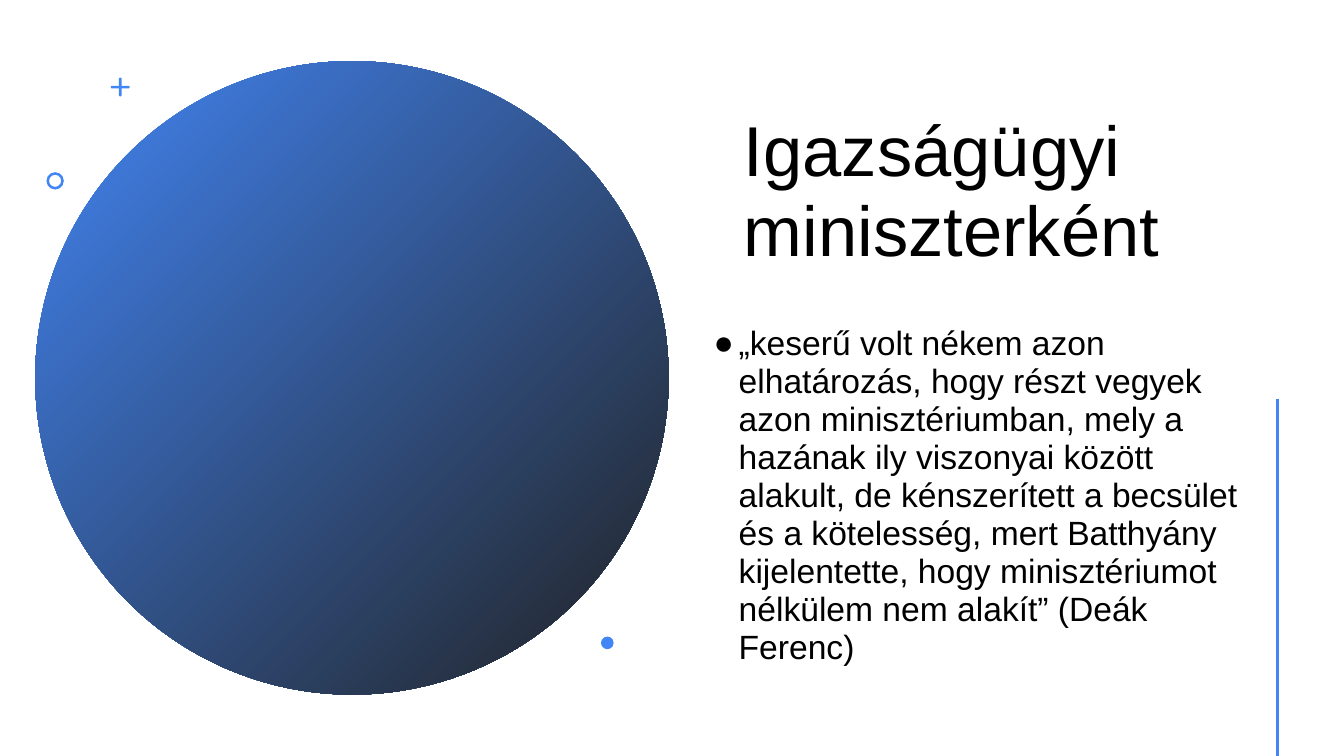
from lxml.etree import SubElement
from pptx import Presentation
from pptx.dml.color import RGBColor
from pptx.enum.shapes import MSO_CONNECTOR, MSO_SHAPE as SHAPE
from pptx.enum.text import MSO_ANCHOR as ANCHOR
from pptx.oxml.ns import qn
from pptx.util import Pt

BLUE = RGBColor(0x42, 0x85, 0xF4)
DARK = RGBColor(0x21, 0x21, 0x21)
BLACK = RGBColor(0, 0, 0)

TITLE = "Igazságügyi miniszterként"
QUOTE = (
    "„keserű volt nékem azon elhatározás, hogy részt vegyek azon "
    "minisztériumban, mely a hazának ily viszonyai között alakult, de "
    "kénszerített a becsület és a kötelesség, mert Batthyány kijelentette, "
    "hogy minisztériumot nélkülem nem alakít” (Deák Ferenc)"
)


def write(tf, text, size, color=BLACK, font="Arial", spacing=0.94, after=0, bullet=None):
    p = tf.paragraphs[0]
    p.line_spacing = spacing
    p.space_after = Pt(after)
    if bullet:
        pPr = p._p.get_or_add_pPr()
        pPr.set("marL", str(Pt(18)))
        pPr.set("indent", str(-Pt(18)))
        SubElement(pPr, qn("a:buFont"), typeface=font)
        SubElement(pPr, qn("a:buChar"), char=bullet)
    r = p.add_run()
    r.text = text
    r.font.name, r.font.size = font, Pt(size)
    r.font.color.rgb = color


class Deck:
    def __init__(self, width, height):
        self.prs = Presentation()
        self.prs.slide_width, self.prs.slide_height = Pt(width), Pt(height)
        self.s = self.prs.slides.add_slide(self.prs.slide_layouts[6])

    def shape(self, kind, cx, cy, w, h, adjust=None):
        """Add a blue shape centred on (cx, cy)."""
        sp = self.s.shapes.add_shape(kind, Pt(cx - w / 2), Pt(cy - h / 2), Pt(w), Pt(h))
        sp.shadow.inherit = False
        sp.fill.solid()
        sp.fill.fore_color.rgb = BLUE
        sp.line.fill.background()
        if adjust is not None:
            sp.adjustments[0] = adjust
        return sp

    def gradient(self, sp, colors, angle):
        sp.fill.gradient()
        sp.fill.gradient_angle = angle
        for stop, color, position in zip(sp.fill.gradient_stops, colors, (0, 1)):
            stop.color.rgb = color
            stop.position = position

    def text(self, x, y, w, h, text, size, anchor=ANCHOR.TOP, **style):
        tf = self.s.shapes.add_textbox(Pt(x), Pt(y), Pt(w), Pt(h)).text_frame
        tf.word_wrap = True
        tf.vertical_anchor = anchor
        write(tf, text, size, **style)

    def line(self, x1, y1, x2, y2, width):
        c = self.s.shapes.add_connector(MSO_CONNECTOR.STRAIGHT, Pt(x1), Pt(y1), Pt(x2), Pt(y2))
        c.line.color.rgb = BLUE
        c.line.width = Pt(width)
        SubElement(c._element.spPr, qn("a:effectLst"))


def main():
    deck = Deck(960, 540)

    # Large gradient disc
    disc = deck.shape(SHAPE.OVAL, 251.4, 269.9, 452.5, 452.5)
    deck.gradient(disc, (BLUE, DARK), 315)

    # Small ornaments: plus, ring, dot
    for w, h in ((13.5, 1.9), (1.9, 13.5)):
        deck.shape(SHAPE.ROUNDED_RECTANGLE, 85.9, 62.2, w, h, 0.5)
    deck.shape(SHAPE.DONUT, 39.4, 129.2, 12.4, 12.4, 0.15)
    deck.shape(SHAPE.OVAL, 433.8, 459.2, 9, 9)

    # Title and quotation
    deck.text(524.2, 36.7, 330.5, 161.3, TITLE, 50.4, ANCHOR.BOTTOM)
    deck.text(502.6, 229, 398.9, 266.4, QUOTE, 24, after=16, bullet="●")

    # Vertical rule at the right
    deck.line(912.4, 285, 912.4, 540, 2)

    deck.prs.save("out.pptx")


if __name__ == "__main__":
    main()
